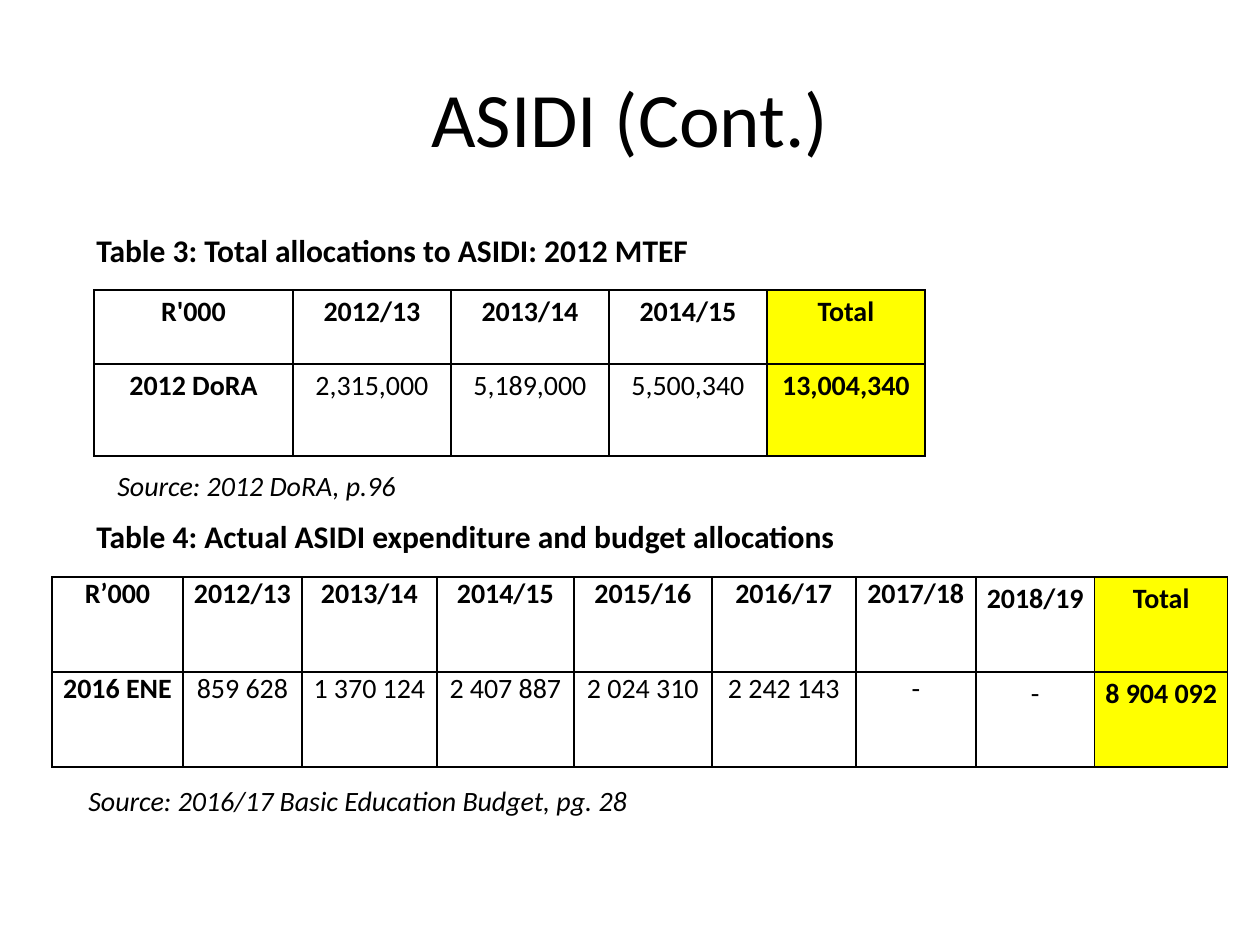
from lxml import etree
from pptx import Presentation
from pptx.dml.color import RGBColor
from pptx.enum.text import MSO_ANCHOR, PP_ALIGN
from pptx.oxml.ns import qn
from pptx.util import Emu, Pt

LEFT, CENTER = PP_ALIGN.LEFT, PP_ALIGN.CENTER
TOP, MIDDLE = MSO_ANCHOR.TOP, MSO_ANCHOR.MIDDLE
PX_PER_INCH = 126
FONT = "Calibri"
COLORS = {"text": "000000", "cell": "FFFFFF", "total": "FFFF00", "border": "000000"}
CELL_MARGIN = 8
TABLE_SIZE = 16
LOOSE = 1.15

TITLE = {"size": 44, "align": CENTER, "anchor": MIDDLE}
CAPTION = {"size": 18, "bold": True, "anchor": MIDDLE}
SOURCE = {"size": 16, "italic": True}

# text, (left, top, width, height) in px, style
TEXTS = [
    ("ASIDI (Cont.)", (63, 38, 1134, 157), TITLE),
    ("Table 3: Total allocations to ASIDI: 2012 MTEF", (84, 231, 770, 38), CAPTION),
    ("Source: 2012 DoRA, p.96", (105, 462, 314, 46), SOURCE),
    ("Table 4: Actual ASIDI expenditure and budget allocations", (84, 517, 770, 38), CAPTION),
    ("Source: 2016/17 Basic Education Budget, pg. 28", (76, 777, 572, 46), SOURCE),
]

TABLES = [
    {
        "position": (94, 290),
        "columns": [199, 158, 158, 158, 158],
        "rows": [74, 92],
        "loose_from": 0,
        "cells": [
            ["R'000", "2012/13", "2013/14", "2014/15", "Total"],
            ["2012 DoRA", "2,315,000", "5,189,000", "5,500,340", "13,004,340"],
        ],
    },
    {
        "position": (52, 577),
        "columns": [131, 119, 135, 137, 138, 144, 120, 119, 133],
        "rows": [95, 95],
        "loose_from": 7,
        "cells": [
            ["R’000", "2012/13", "2013/14", "2014/15", "2015/16", "2016/17",
             "2017/18", "2018/19", "Total"],
            ["2016 ENE", "859 628", "1 370 124", "2 407 887", "2 024 310", "2 242 143",
             "-", "-", "8 904 092"],
        ],
    },
]


def px(length):
    return Emu(round(length * 914400 / PX_PER_INCH))


def write(text_frame, text, size, bold=False, italic=False, align=LEFT, spacing=1.0):
    paragraph = text_frame.paragraphs[0]
    paragraph.alignment = align
    paragraph.line_spacing = spacing
    run = paragraph.add_run()
    run.text = text
    font_values = {"name": FONT, "size": Pt(size), "bold": bold, "italic": italic}
    for name, value in font_values.items():
        setattr(run.font, name, value)
    run.font.color.rgb = RGBColor.from_string(COLORS["text"])


def add_text(slide, text, box, style):
    text_frame = slide.shapes.add_textbox(*map(px, box)).text_frame
    text_frame.word_wrap = True
    style = dict(style)
    text_frame.vertical_anchor = style.pop("anchor", TOP)
    write(text_frame, text, **style)


def set_borders(cell):
    """Draw all four edges; they must stand before the fill in the cell properties."""
    properties = cell._tc.get_or_add_tcPr()
    for index, edge in enumerate(("a:lnL", "a:lnR", "a:lnT", "a:lnB")):
        line = etree.Element(qn(edge), w=str(Pt(1)))
        fill = etree.SubElement(line, qn("a:solidFill"))
        etree.SubElement(fill, qn("a:srgbClr"), val=COLORS["border"])
        properties.insert(index, line)


def add_table(slide, position, columns, rows, loose_from, cells):
    box = (*position, sum(columns), sum(rows))
    table = slide.shapes.add_table(len(rows), len(columns), *map(px, box)).table
    table.first_row = table.horz_banding = False
    for column, width in zip(table.columns, columns):
        column.width = px(width)
    for row, height in zip(table.rows, rows):
        row.height = px(height)

    cell_values = {"margin_left": px(CELL_MARGIN), "margin_right": px(CELL_MARGIN),
                   "margin_top": 0, "margin_bottom": 0, "vertical_anchor": TOP}
    last = len(columns) - 1
    for row_index, row_texts in enumerate(cells):
        for column_index, text in enumerate(row_texts):
            cell = table.cell(row_index, column_index)
            for name, value in cell_values.items():
                setattr(cell, name, value)
            cell.fill.solid()
            color = COLORS["total" if column_index == last else "cell"]
            cell.fill.fore_color.rgb = RGBColor.from_string(color)
            set_borders(cell)
            write(cell.text_frame, text, TABLE_SIZE, align=CENTER,
                  bold=row_index == 0 or column_index in (0, last),
                  spacing=LOOSE if column_index >= loose_from else 1.0)


def main():
    presentation = Presentation()
    presentation.slide_width, presentation.slide_height = px(1260), px(945)
    slide = presentation.slides.add_slide(presentation.slide_layouts[6])
    for text, box, style in TEXTS:
        add_text(slide, text, box, style)
    for table in TABLES:
        add_table(slide, **table)
    presentation.save("out.pptx")


if __name__ == "__main__":
    main()
